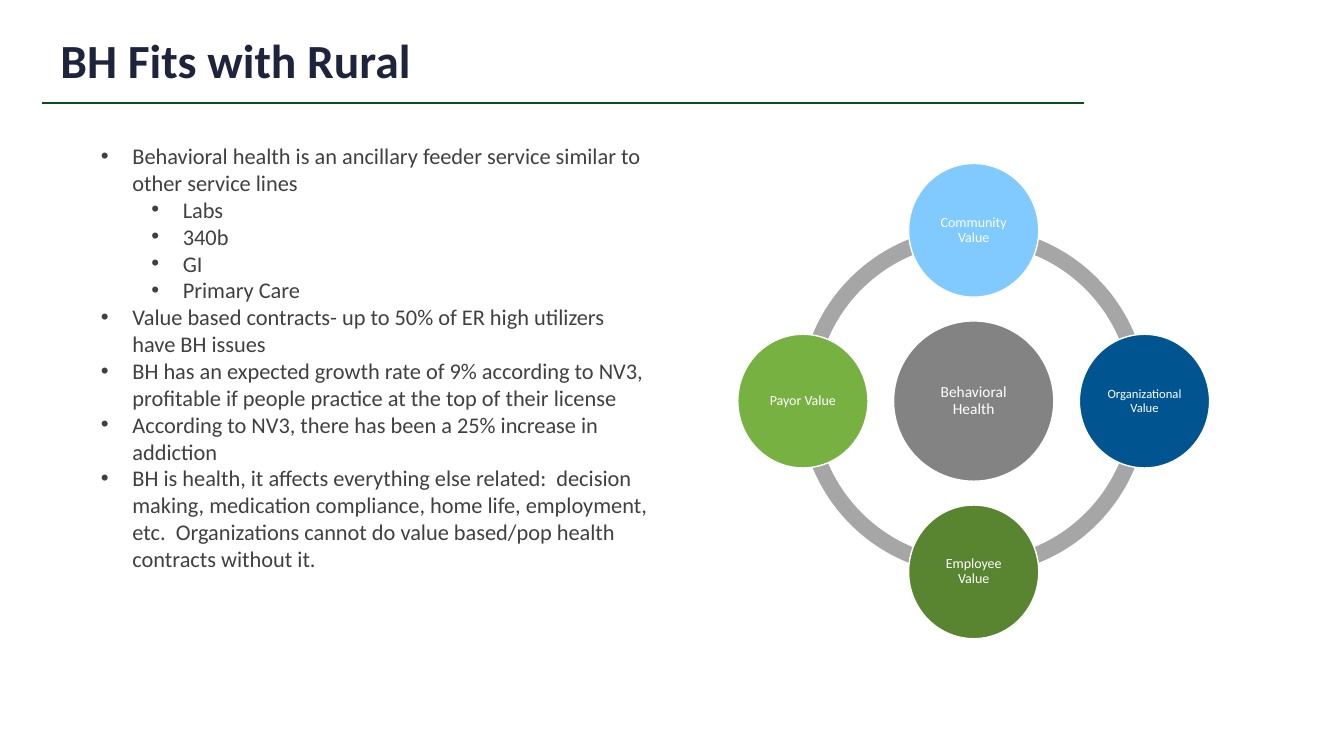
from math import cos, radians, sin

from lxml.etree import SubElement
from pptx import Presentation
from pptx.dml.color import RGBColor
from pptx.enum.shapes import MSO_CONNECTOR, MSO_SHAPE
from pptx.enum.text import MSO_ANCHOR, MSO_AUTO_SIZE, PP_ALIGN
from pptx.oxml.ns import qn
from pptx.util import Pt

FONT = "Calibri"
WHITE = "FFFFFF"
RING_GRAY = "A6A6A6"
CENTER_X, CENTER_Y = 695.5, 286.5
RING_SIZE = 249
ORBIT = 122
BULLET_INDENT = 22.5

BULLETS = [
    (0, "Behavioral health is an ancillary feeder service similar to other service lines"),
    (1, "Labs"),
    (1, "340b"),
    (1, "GI"),
    (1, "Primary Care"),
    (0, "Value based contracts- up to 50% of ER high utilizers have BH issues"),
    (0, "BH has an expected growth rate of 9% according to NV3, profitable if people "
        "practice at the top of their license"),
    (0, "According to NV3, there has been a 25% increase in addiction"),
    (0, "BH is health, it affects everything else related:  decision making, medication "
        "compliance, home life, employment, etc.  Organizations cannot do value based/pop "
        "health contracts without it."),
]

# Angle in degrees clockwise from the right, text, fill, text size
VALUES = [
    (270, "Community Value", "80CAFF", 10),
    (0, "Organizational Value", "005490", 9),
    (90, "Employee Value", "598531", 10),
    (180, "Payor Value", "77B142", 10),
]


def color(hex_value):
    return RGBColor.from_string(hex_value)


def set_attributes(target, values):
    for name, value in values.items():
        setattr(target, name, value)


def format_font(paragraph, size, hex_value, bold=False):
    set_attributes(paragraph.font, {"name": FONT, "size": Pt(size), "bold": bold})
    paragraph.font.color.rgb = color(hex_value)


def set_line(shape, hex_value, width):
    shape.line.color.rgb = color(hex_value)
    shape.line.width = Pt(width)


def add_title(slide, text):
    title = slide.shapes.title
    set_attributes(title, {"left": Pt(36), "top": Pt(21.5), "width": Pt(749), "height": Pt(45.5)})
    set_attributes(title.text_frame, {
        "text": text, "vertical_anchor": MSO_ANCHOR.BOTTOM,
        "auto_size": MSO_AUTO_SIZE.NONE, "word_wrap": True})
    paragraph = title.text_frame.paragraphs[0]
    set_attributes(paragraph, {"alignment": PP_ALIGN.LEFT, "line_spacing": 0.9})
    format_font(paragraph, 34, "1D243C", bold=True)


def add_title_rule(slide):
    rule = slide.shapes.add_connector(
        MSO_CONNECTOR.STRAIGHT, Pt(30), Pt(73.5), Pt(774), Pt(73.5))
    set_line(rule, "0A4E1F", 1)
    SubElement(rule._element.spPr, qn("a:effectLst"))


def add_bullets(slide, items):
    box = slide.shapes.add_textbox(Pt(65), Pt(98), Pt(408), Pt(337))
    frame = box.text_frame
    frame.word_wrap = True
    for index, (level, text) in enumerate(items):
        paragraph = frame.add_paragraph() if index else frame.paragraphs[0]
        set_attributes(paragraph, {"text": text, "level": level})
        properties = paragraph._p.get_or_add_pPr()
        properties.set("marL", str(Pt(BULLET_INDENT + 36 * level)))
        properties.set("indent", str(Pt(-BULLET_INDENT)))
        SubElement(properties, qn("a:buFont"), typeface="Arial")
        SubElement(properties, qn("a:buChar"), char="•")
        format_font(paragraph, 16, "404040")


def add_centered(slide, preset, x, y, width, height, fill):
    shape = slide.shapes.add_shape(
        preset, Pt(x - width / 2), Pt(y - height / 2), Pt(width), Pt(height))
    shape.shadow.inherit = False
    shape.fill.solid()
    shape.fill.fore_color.rgb = color(fill)
    return shape


def add_ring_quarter(slide, start):
    """Add a quarter of the ring, clockwise from the start angle in degrees."""
    arc = add_centered(slide, MSO_SHAPE.BLOCK_ARC, CENTER_X, CENTER_Y,
                       RING_SIZE, RING_SIZE, RING_GRAY)
    # Angles are stored in 60000ths of a degree and scaled by 100000
    arc.adjustments[0] = start * 0.6
    arc.adjustments[1] = (start + 90) % 360 * 0.6
    arc.adjustments[2] = 0.046
    arc.line.fill.background()


def add_circle(slide, x, y, width, height, text, fill, size):
    circle = add_centered(slide, MSO_SHAPE.OVAL, x, y, width, height, fill)
    set_line(circle, WHITE, 1)
    frame = circle.text_frame
    margins = {f"margin_{side}": Pt(1) for side in ("left", "top", "right", "bottom")}
    set_attributes(frame, {
        "text": text, "word_wrap": True, "vertical_anchor": MSO_ANCHOR.MIDDLE, **margins})
    paragraph = frame.paragraphs[0]
    set_attributes(paragraph, {"alignment": PP_ALIGN.CENTER, "line_spacing": 0.9})
    format_font(paragraph, size, WHITE)


def add_value_wheel(slide):
    for start in range(0, 360, 90):
        add_ring_quarter(slide, start)
    add_circle(slide, CENTER_X, CENTER_Y, 114.5, 114.5, "Behavioral Health", "838383", 11)
    for angle, text, fill, size in VALUES:
        x = CENTER_X + ORBIT * cos(radians(angle))
        y = CENTER_Y + ORBIT * sin(radians(angle))
        add_circle(slide, x, y, 93, 95.5, text, fill, size)


def main():
    presentation = Presentation()
    set_attributes(presentation, {"slide_width": Pt(960), "slide_height": Pt(540)})
    slide = presentation.slides.add_slide(presentation.slide_layouts[5])
    add_title(slide, "BH Fits with Rural")
    add_title_rule(slide)
    add_bullets(slide, BULLETS)
    add_value_wheel(slide)
    presentation.save("out.pptx")


if __name__ == "__main__":
    main()
